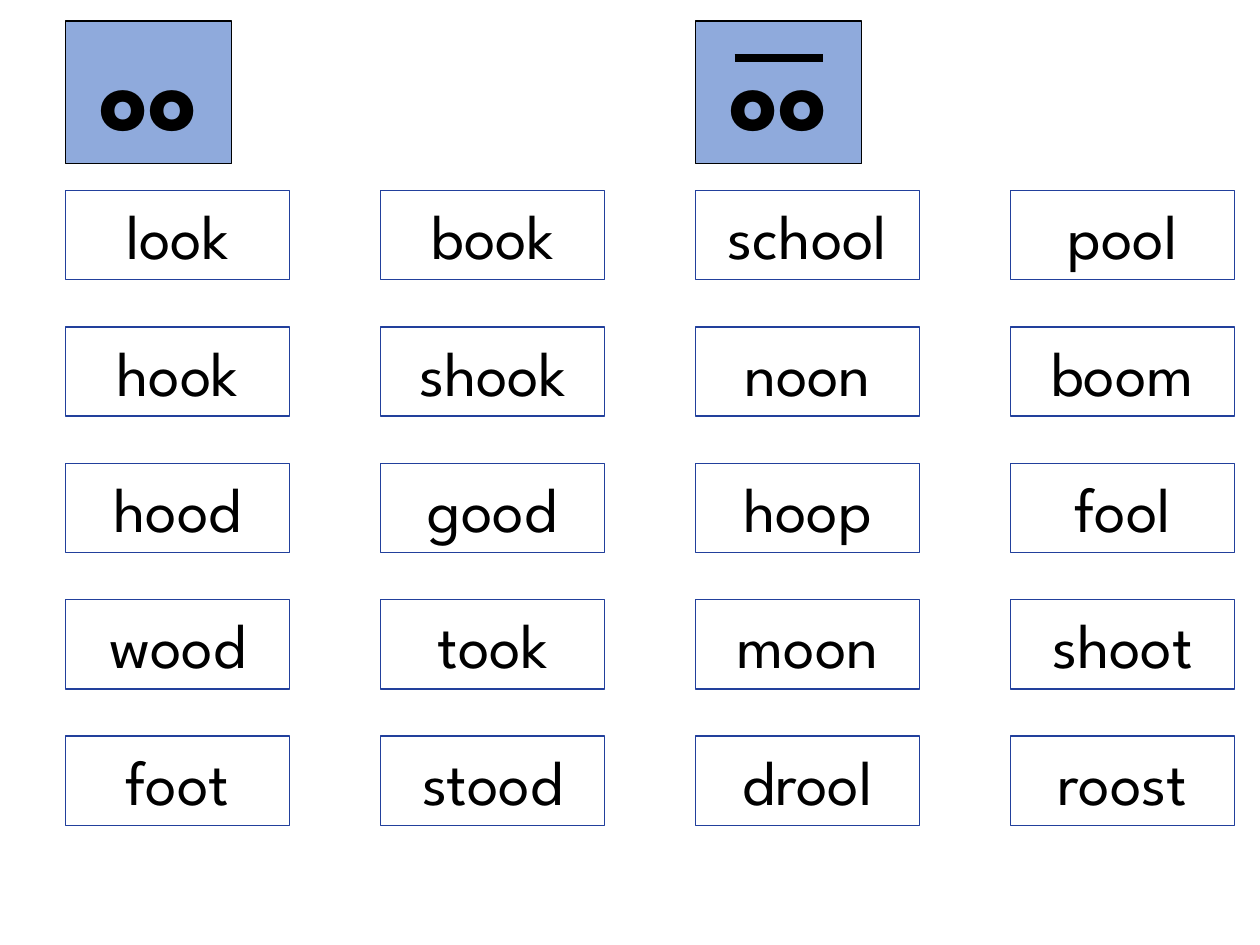
from lxml import etree
from pptx import Presentation
from pptx.dml.color import RGBColor
from pptx.enum.shapes import MSO_CONNECTOR as Connector, MSO_SHAPE as Shape
from pptx.enum.text import MSO_ANCHOR as Anchor, MSO_AUTO_SIZE as AutoSize, PP_ALIGN as Align
from pptx.oxml.ns import qn
from pptx.util import Cm, Pt

FONT = "League Spartan"
BLACK, CARD_EDGE, SOUND_FILL = "000000", "22409C", "8FAADC"
CARD_WIDTH, CARD_HEIGHT = 4.52, 1.8
COLUMN_STEP, ROW_STEP = 6.35, 2.75
SOUND_WIDTH, SOUND_HEIGHT = 3.35, 2.87
LEFT, SOUND_TOP, WORDS_TOP = 1.32, 0.43, 3.84

SHORT_WORDS = [
    ["look", "hook", "hood", "wood", "foot"],
    ["book", "shook", "good", "took", "stood"],
]
LONG_WORDS = [
    ["school", "noon", "hoop", "moon", "drool"],
    ["pool", "boom", "fool", "shoot", "roost"],
]


def color(value):
    return RGBColor.from_string(value)


def outline(part, value, width):
    part.line.color.rgb = color(value)
    part.line.width = Pt(width)


def write(box, wording, size, bold=False):
    paragraph = box.text_frame.paragraphs[0]
    paragraph.text = wording
    paragraph.alignment = Align.CENTER
    font = paragraph.font
    font.name, font.size, font.bold = FONT, Pt(size), bold
    font.color.rgb = color(BLACK)


def add_word_card(slide, left, top, word):
    card = slide.shapes.add_textbox(Cm(left), Cm(top), Cm(CARD_WIDTH), Cm(CARD_HEIGHT))
    outline(card, CARD_EDGE, 0.75)
    card.text_frame.word_wrap = True
    card.text_frame.auto_size = AutoSize.SHAPE_TO_FIT_TEXT
    write(card, word, 36)


def add_word_column(slide, left, top, words):
    for row, word in enumerate(words):
        add_word_card(slide, left, top + row * ROW_STEP, word)


def add_macron(group, left, top, length):
    macron = group.shapes.add_connector(
        Connector.STRAIGHT, Cm(left), Cm(top), Cm(left + length), Cm(top))
    outline(macron, BLACK, 4.5)
    etree.SubElement(macron._element.spPr, qn("a:effectLst"))


def add_sound_card(slide, left, top, is_long):
    group = slide.shapes.add_group_shape()
    card = group.shapes.add_shape(
        Shape.RECTANGLE, Cm(left), Cm(top), Cm(SOUND_WIDTH), Cm(SOUND_HEIGHT))
    card.shadow.inherit = False
    card.fill.solid()
    card.fill.fore_color.rgb = color(SOUND_FILL)
    outline(card, BLACK, 1)
    card.text_frame.vertical_anchor = Anchor.MIDDLE
    write(card, "oo", 54, bold=True)
    if is_long:
        add_macron(group, left + 0.79, top + 0.74, 1.78)


def main():
    presentation = Presentation()
    presentation.slide_width, presentation.slide_height = Cm(25.4), Cm(19.05)
    slide = presentation.slides.add_slide(presentation.slide_layouts[6])
    for column, words in enumerate(SHORT_WORDS + LONG_WORDS):
        add_word_column(slide, LEFT + column * COLUMN_STEP, WORDS_TOP, words)
    add_sound_card(slide, LEFT, SOUND_TOP, is_long=False)
    add_sound_card(slide, LEFT + len(SHORT_WORDS) * COLUMN_STEP, SOUND_TOP, is_long=True)
    presentation.save("out.pptx")


if __name__ == "__main__":
    main()
